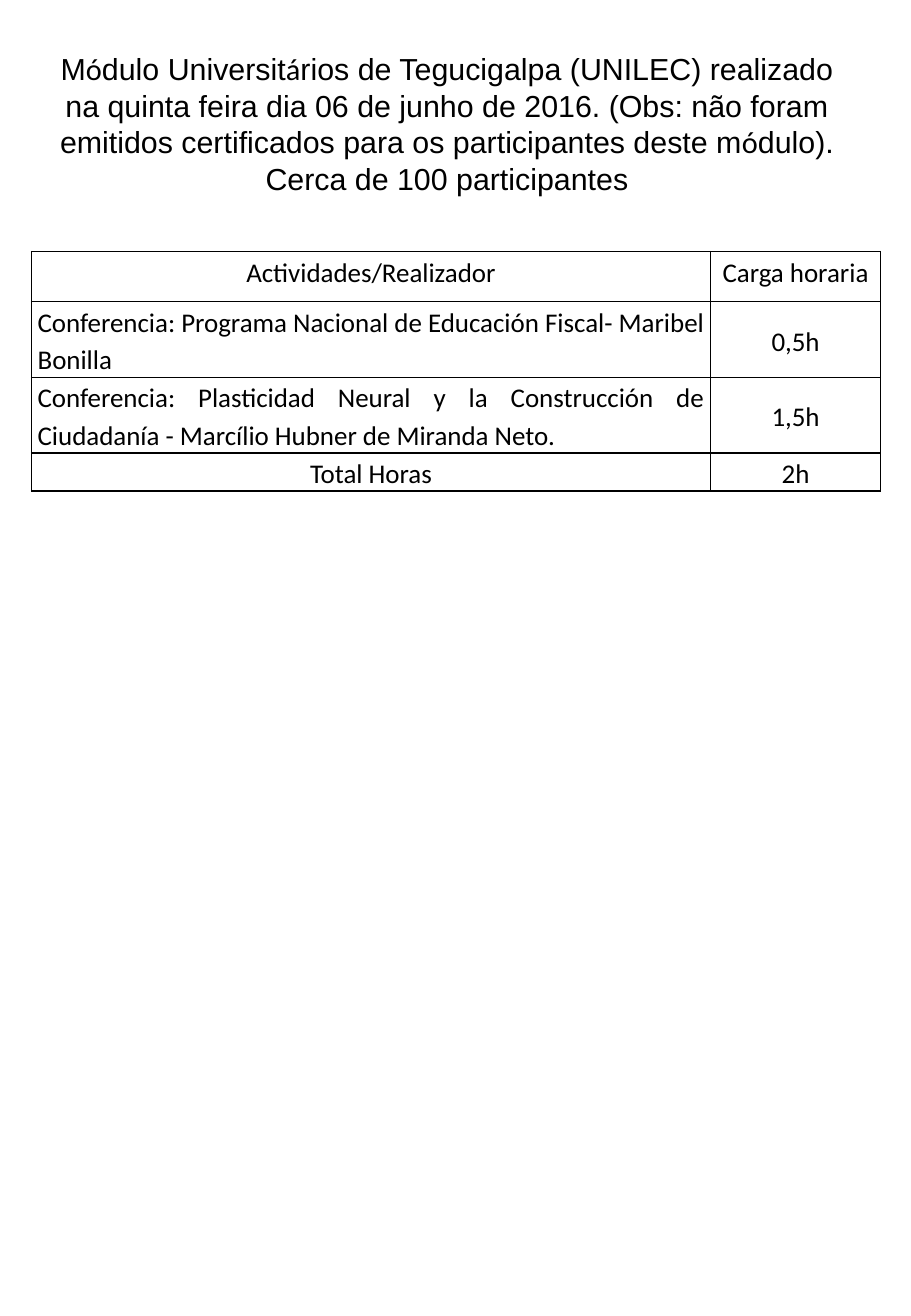
from lxml import etree
from pptx import Presentation
from pptx.dml.color import RGBColor
from pptx.enum.text import MSO_ANCHOR, MSO_AUTO_SIZE, PP_ALIGN
from pptx.oxml.ns import qn
from pptx.util import Pt

PX = 9144  # EMU per px, 100 px to the inch
CENTER, JUSTIFY = PP_ALIGN.CENTER, PP_ALIGN.JUSTIFY
TOP, MIDDLE = MSO_ANCHOR.TOP, MSO_ANCHOR.MIDDLE
FIT_SHAPE = MSO_AUTO_SIZE.SHAPE_TO_FIT_TEXT

COLORS = {"paper": "FFFFFF", "ink": "000000"}
BODY_FONT, TITLE_FONT = "Calibri", "Arial"

TITLE_SPANS = [
    ("M", TITLE_FONT),
    ("ó", BODY_FONT),
    ("dulo Universit", TITLE_FONT),
    ("á", BODY_FONT),
    ("rios de Tegucigalpa (UNILEC) realizado na quinta feira dia 06 de junho "
     "de 2016. (Obs: não foram emitidos certificados para os participantes "
     "deste m", TITLE_FONT),
    ("ó", BODY_FONT),
    ("dulo). Cerca de 100 participantes", TITLE_FONT),
]

COLUMN_WIDTHS = [559, 140]
# Row height, activity, activity alignment, hours, hours anchor
ROWS = [
    (41, "Actividades/Realizador", CENTER, "Carga horaria", TOP),
    (61, "Conferencia: Programa Nacional de Educación Fiscal- Maribel Bonilla",
     JUSTIFY, "0,5h", MIDDLE),
    (61, "Conferencia: Plasticidad Neural y la Construcción de Ciudadanía - "
     "Marcílio Hubner de Miranda Neto.", JUSTIFY, "1,5h", MIDDLE),
    (31, "Total Horas", CENTER, "2h", MIDDLE),
]


def px(*lengths):
    return [length * PX for length in lengths]


def add_span(para, text, font, size):
    span = para.add_run()
    span.text = text
    span.font.name = font
    span.font.size = Pt(size)
    span.font.color.rgb = RGBColor.from_string(COLORS["ink"])


def add_title(page):
    box = page.shapes.add_textbox(*px(38, 36, 660, 131))
    frame = box.text_frame
    frame.word_wrap = True
    frame.auto_size = FIT_SHAPE
    frame.vertical_anchor = MIDDLE
    para = frame.paragraphs[0]
    para.alignment = CENTER
    for text, font in TITLE_SPANS:
        add_span(para, text, font, 18)


def add_borders(cell):
    properties = cell._tc.get_or_add_tcPr()
    for position, side in enumerate(("lnL", "lnR", "lnT", "lnB")):
        line = etree.Element(qn("a:" + side), w=str(Pt(1)))
        fill = etree.SubElement(line, qn("a:solidFill"))
        etree.SubElement(fill, qn("a:srgbClr"), val=COLORS["ink"])
        properties.insert(position, line)


def fill_cell(cell, text, alignment, anchor):
    cell.fill.background()
    cell.margin_left, cell.margin_right = px(5, 5)
    cell.margin_top = cell.margin_bottom = 0
    cell.vertical_anchor = anchor
    para = cell.text_frame.paragraphs[0]
    para.alignment = alignment
    para.line_spacing = 1.15
    add_span(para, text, BODY_FONT, 16)
    add_borders(cell)


def add_hours_table(page):
    height = sum(row[0] for row in ROWS)
    frame = page.shapes.add_table(len(ROWS), len(COLUMN_WIDTHS),
                                  *px(26, 207, sum(COLUMN_WIDTHS), height))
    table = frame.table
    table.first_row = table.horz_banding = False
    for column, width in zip(table.columns, COLUMN_WIDTHS):
        column.width = width * PX
    for index, (height, activity, alignment, hours, anchor) in enumerate(ROWS):
        table.rows[index].height = height * PX
        fill_cell(table.cell(index, 0), activity, alignment, TOP)
        fill_cell(table.cell(index, 1), hours, CENTER, anchor)


def main():
    deck = Presentation()
    deck.slide_width, deck.slide_height = px(750, 1083)
    page = deck.slides.add_slide(deck.slide_layouts[6])
    page.background.fill.solid()
    page.background.fill.fore_color.rgb = RGBColor.from_string(COLORS["paper"])

    # Table of activities and hours
    add_hours_table(page)
    # Module heading
    add_title(page)

    deck.save("out.pptx")


if __name__ == "__main__":
    main()
